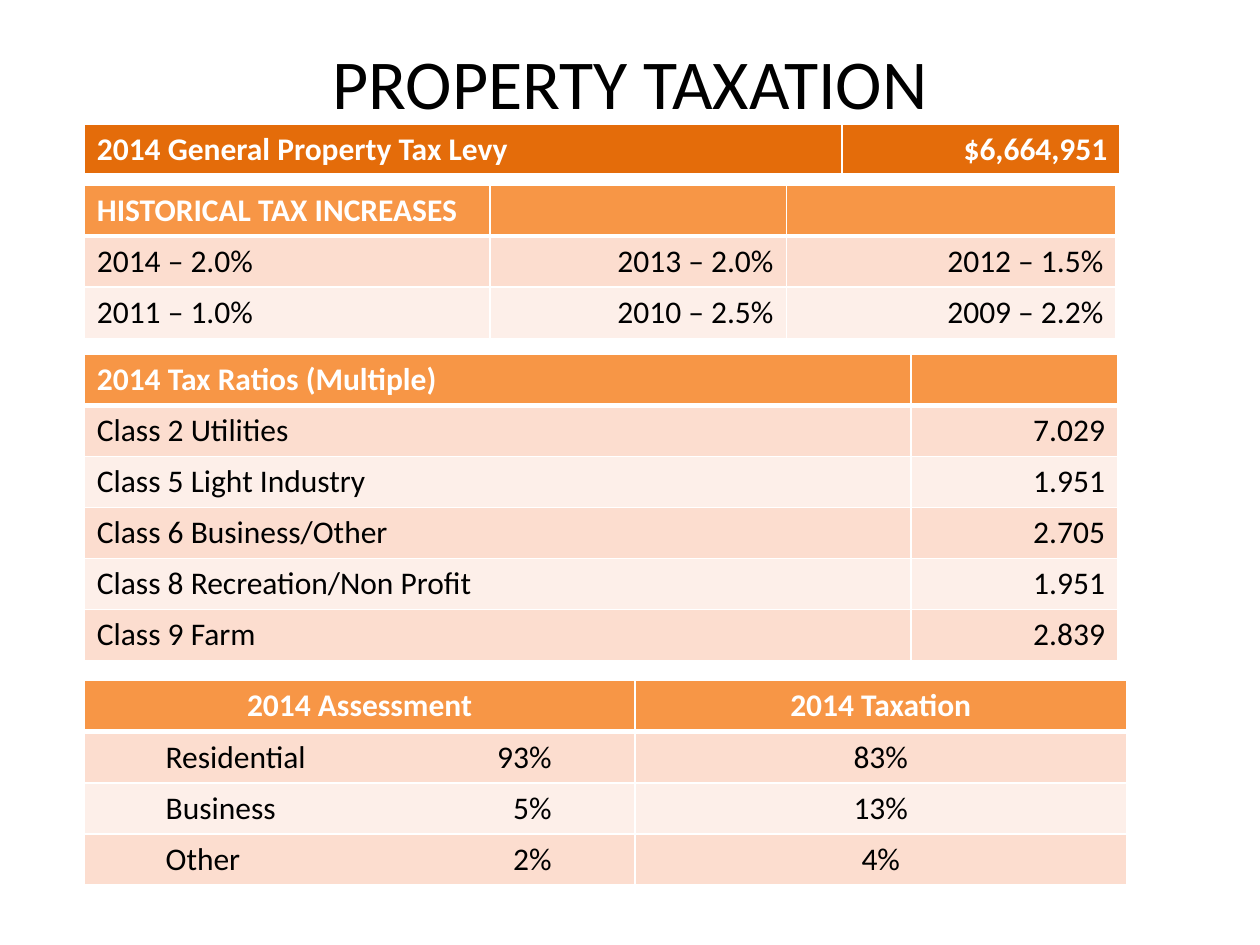
from lxml import etree
from pptx import Presentation
from pptx.dml.color import RGBColor
from pptx.enum.text import MSO_ANCHOR, PP_ALIGN
from pptx.oxml.ns import qn
from pptx.util import Cm, Pt

LEFT, CENTER, RIGHT = PP_ALIGN.LEFT, PP_ALIGN.CENTER, PP_ALIGN.RIGHT
TOP, MIDDLE = MSO_ANCHOR.TOP, MSO_ANCHOR.MIDDLE

COLORS = {
    "levy": "E46C0A",
    "header": "F79646",
    "odd_row": "FCDDCF",
    "even_row": "FDEFE9",
    "white": "FFFFFF",
    "black": "000000",
}
FONT = "Calibri"
TABLE_LEFT = 1.7
ROW_HEIGHT = 1.03
LABEL_INDENT = 1.64
SHARE_TAB = 7.78

TABLES = [
    {
        "top": 2.51,
        "widths": [15.27, 5.61],
        "alignments": [LEFT, RIGHT],
        "header_fill": "levy",
        "rows": [["2014 General Property Tax Levy", "$6,664,951"]],
    },
    {
        "top": 3.73,
        "widths": [8.18, 5.97, 6.65],
        "alignments": [LEFT, RIGHT, RIGHT],
        "anchors": [TOP, MIDDLE, MIDDLE],
        "rows": [
            ["HISTORICAL TAX INCREASES", "", ""],
            ["2014 – 2.0%", "2013 – 2.0%", "2012 – 1.5%"],
            ["2011 – 1.0%", "2010 – 2.5%", "2009 – 2.2%"],
        ],
    },
    {
        "top": 7.14,
        "widths": [16.66, 4.17],
        "alignments": [LEFT, RIGHT],
        "rows": [
            ["2014 Tax Ratios (Multiple)", ""],
            ["Class 2 Utilities", "7.029"],
            ["Class 5 Light Industry", "1.951"],
            ["Class 6 Business/Other", "2.705"],
            ["Class 8 Recreation/Non Profit", "1.951"],
            ["Class 9 Farm", "2.839"],
        ],
    },
    {
        "top": 13.72,
        "widths": [11.1, 9.91],
        "alignments": [CENTER, CENTER],
        "rows": [
            ["2014 Assessment", "2014 Taxation"],
            ["Residential\t93%", "83%"],
            ["Business\t5%", "13%"],
            ["Other\t2%", "4%"],
        ],
    },
]


def set_attributes(target, values):
    for name, value in values.items():
        setattr(target, name, value)


def write_text(paragraph, text, alignment, size, color, bold=False):
    paragraph.alignment = alignment
    if text:
        run = paragraph.add_run()
        run.text = text
        set_attributes(run.font, {"name": FONT, "size": Pt(size), "bold": bold})
        run.font.color.rgb = RGBColor.from_string(COLORS[color])


def add_title(slide, text):
    box = slide.shapes.add_textbox(Cm(1.27), Cm(0.76), Cm(22.86), Cm(1.75))
    set_attributes(box.text_frame, {"word_wrap": True, "vertical_anchor": MIDDLE})
    write_text(box.text_frame.paragraphs[0], text, CENTER, 40, "black")


def set_borders(cell, bottom_width):
    properties = cell._tc.get_or_add_tcPr()
    widths = {"a:lnL": 1, "a:lnR": 1, "a:lnT": 1, "a:lnB": bottom_width}
    for position, (tag, width) in enumerate(widths.items()):
        line = etree.Element(qn(tag), w=str(Pt(width)))
        fill = etree.SubElement(line, qn("a:solidFill"))
        etree.SubElement(fill, qn("a:srgbClr"), val=COLORS["white"])
        properties.insert(position, line)


def add_right_tab(paragraph, position):
    properties = paragraph._p.get_or_add_pPr()
    tabs = etree.SubElement(properties, qn("a:tabLst"))
    etree.SubElement(tabs, qn("a:tab"), pos=str(Cm(position)), algn="r")


def format_cell(cell, text, fill, alignment, anchor, is_header):
    cell.fill.solid()
    cell.fill.fore_color.rgb = RGBColor.from_string(COLORS[fill])
    cell.vertical_anchor = anchor
    set_borders(cell, 3 if is_header else 1)
    paragraph = cell.text_frame.paragraphs[0]
    has_tab = "\t" in text
    color = "white" if is_header else "black"
    write_text(paragraph, text, LEFT if has_tab else alignment, 18, color, is_header)
    if has_tab:
        cell.margin_left = Cm(LABEL_INDENT)
        add_right_tab(paragraph, SHARE_TAB)


def add_tax_table(slide, top, widths, alignments, rows, header_fill="header", anchors=None):
    anchors = anchors or [TOP] * len(widths)
    frame = slide.shapes.add_table(
        len(rows), len(widths), Cm(TABLE_LEFT), Cm(top),
        Cm(sum(widths)), Cm(ROW_HEIGHT * len(rows)),
    )
    table = frame.table
    for column, width in zip(table.columns, widths):
        column.width = Cm(width)
    for row_index, texts in enumerate(rows):
        table.rows[row_index].height = Cm(ROW_HEIGHT)
        is_header = row_index == 0
        band = "odd_row" if row_index % 2 else "even_row"
        fill = header_fill if is_header else band
        for column_index, text in enumerate(texts):
            format_cell(
                table.cell(row_index, column_index), text, fill,
                alignments[column_index], anchors[column_index], is_header,
            )


def main():
    presentation = Presentation()
    set_attributes(presentation, {"slide_width": Cm(25.4), "slide_height": Cm(19.05)})
    slide = presentation.slides.add_slide(presentation.slide_layouts[6])
    add_title(slide, "PROPERTY TAXATION")
    for table in TABLES:
        add_tax_table(slide, **table)
    presentation.save("out.pptx")


if __name__ == "__main__":
    main()
